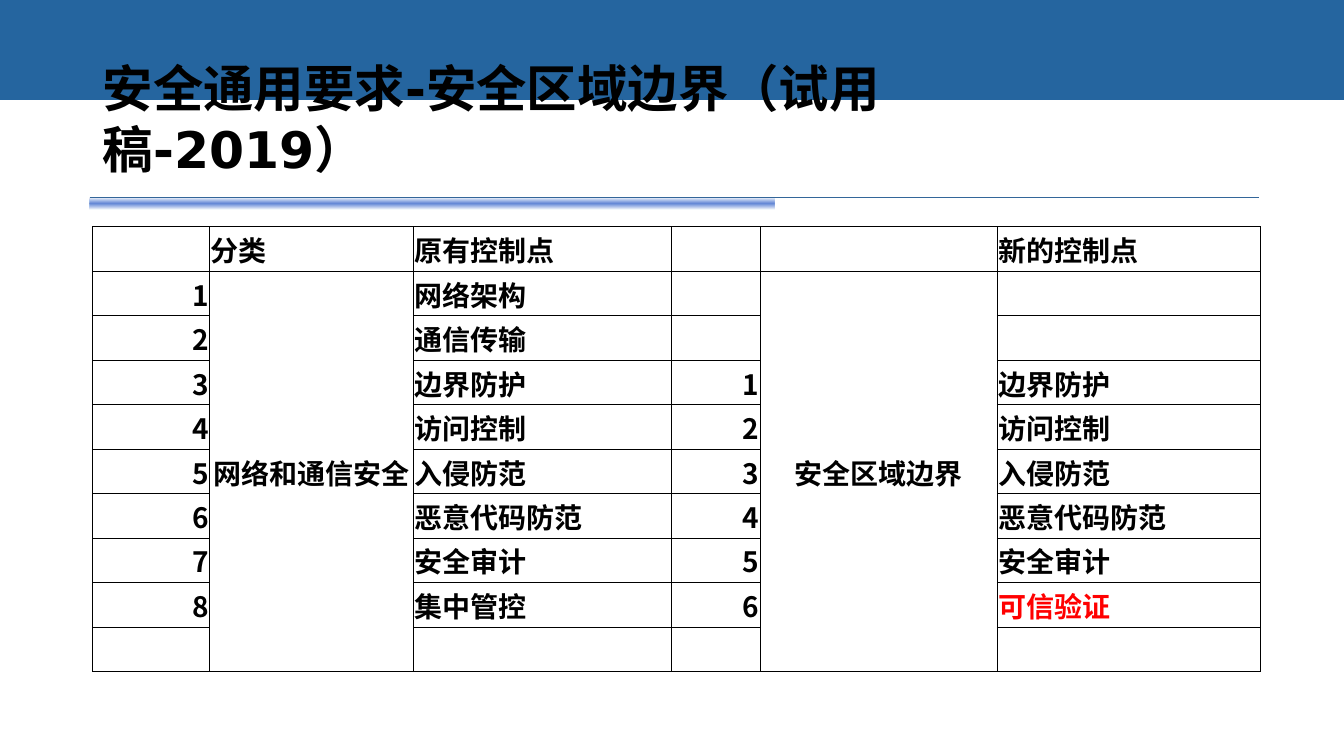
from lxml import etree
from pptx import Presentation
from pptx.dml.color import RGBColor
from pptx.enum.shapes import MSO_CONNECTOR, MSO_SHAPE
from pptx.enum.text import MSO_ANCHOR, PP_ALIGN
from pptx.oxml import parse_xml
from pptx.oxml.ns import nsdecls, qn
from pptx.util import Inches, Pt

LEFT, CENTER, RIGHT = PP_ALIGN.LEFT, PP_ALIGN.CENTER, PP_ALIGN.RIGHT
MIDDLE, BOTTOM = MSO_ANCHOR.MIDDLE, MSO_ANCHOR.BOTTOM
RECTANGLE, STRAIGHT = MSO_SHAPE.RECTANGLE, MSO_CONNECTOR.STRAIGHT

BLACK = RGBColor(0x00, 0x00, 0x00)
RED = RGBColor(0xFF, 0x00, 0x00)
BAND_BLUE = RGBColor(0x25, 0x65, 0x9F)
RULE_BLUE = RGBColor(0x33, 0x66, 0x99)
GLOW_EDGE = RGBColor(0x57, 0x81, 0xD5)
GLOW_CORE = RGBColor(0x63, 0x87, 0xD6)

TITLE_FONT = "DejaVu Sans"
BODY_FONT = "Noto Sans CJK SC"

COLUMN_WIDTHS = [1.16, 2.02, 2.56, 0.88, 2.35, 2.61]
COLUMN_ALIGNS = [RIGHT, CENTER, LEFT, RIGHT, CENTER, LEFT]
HEADER = ["", "分类", "原有控制点", "", "", "新的控制点"]
OLD_POINTS = ["网络架构", "通信传输", "边界防护", "访问控制", "入侵防范",
              "恶意代码防范", "安全审计", "集中管控"]
NEW_POINTS = OLD_POINTS[2:7] + ["可信验证"]
FIRST_NEW_ROW = 3


def write_text(frame, text, size=20, font=BODY_FONT, color=BLACK, bold=True, align=LEFT):
    paragraph = frame.paragraphs[0]
    paragraph.alignment = align
    run = paragraph.add_run()
    run.text = text
    run.font.size = Pt(size)
    run.font.name = font
    run.font.bold = bold
    run.font.color.rgb = color
    east_asian = parse_xml(f'<a:ea {nsdecls("a")} typeface="{BODY_FONT}"/>')
    run.font._element.find(qn("a:latin")).addnext(east_asian)


class SlideBuilder:
    def __init__(self, slide):
        self.shapes = slide.shapes

    def rectangle(self, left, top, width, height, color=None):
        shape = self.shapes.add_shape(
            RECTANGLE, Inches(left), Inches(top), Inches(width), Inches(height))
        shape.shadow.inherit = False
        shape.line.fill.background()
        if color is not None:
            shape.fill.solid()
            shape.fill.fore_color.rgb = color
        return shape

    def glow_bar(self, left, top, width, height):
        bar = self.rectangle(left, top, width, height)
        gradient = parse_xml(
            f'<a:gradFill {nsdecls("a")} rotWithShape="1"><a:gsLst>'
            f'<a:gs pos="0"><a:srgbClr val="{GLOW_EDGE}"><a:alpha val="0"/></a:srgbClr></a:gs>'
            f'<a:gs pos="50000"><a:srgbClr val="{GLOW_CORE}"/></a:gs>'
            f'<a:gs pos="100000"><a:srgbClr val="{GLOW_EDGE}"><a:alpha val="0"/></a:srgbClr></a:gs>'
            '</a:gsLst><a:lin ang="5400000" scaled="0"/></a:gradFill>')
        bar._element.spPr.find(qn("a:prstGeom")).addnext(gradient)

    def rule(self, left, top, width):
        line = self.shapes.add_connector(
            STRAIGHT, Inches(left), Inches(top), Inches(left + width), Inches(top))
        line.line.color.rgb = RULE_BLUE
        line.line.width = Pt(0.75)
        etree.SubElement(line._element.spPr, qn("a:effectLst"))

    def title(self, text, left, top, width, height):
        frame = self.shapes.add_textbox(
            Inches(left), Inches(top), Inches(width), Inches(height)).text_frame
        frame.word_wrap = True
        frame.vertical_anchor = BOTTOM
        frame.margin_left = frame.margin_right = Inches(0.1)
        frame.margin_top = frame.margin_bottom = 0
        write_text(frame, text, size=36, font=TITLE_FONT)

    def table(self, rows, left, top, height):
        table = self.shapes.add_table(
            len(rows), len(COLUMN_WIDTHS), Inches(left), Inches(top),
            Inches(sum(COLUMN_WIDTHS)), Inches(height)).table
        table.first_row = table.horz_banding = False
        for column, width in zip(table.columns, COLUMN_WIDTHS):
            column.width = Inches(width)
        for r, row in enumerate(rows):
            for c, text in enumerate(row):
                self.cell(table.cell(r, c), text,
                          color=RED if text == NEW_POINTS[-1] else BLACK,
                          align=COLUMN_ALIGNS[c] if r else LEFT)
        for c in (1, 4):
            table.cell(1, c).merge(table.cell(len(rows) - 1, c))

    def cell(self, cell, text, **text_format):
        cell.vertical_anchor = MIDDLE
        cell.margin_left = cell.margin_right = cell.margin_top = Inches(0.01)
        cell.margin_bottom = 0
        properties = cell._tc.get_or_add_tcPr()
        for side in ("lnL", "lnR", "lnT", "lnB"):
            properties.append(parse_xml(
                f'<a:{side} {nsdecls("a")} w="{Pt(0.5)}"><a:solidFill>'
                f'<a:srgbClr val="{BLACK}"/></a:solidFill></a:{side}>'))
        cell.fill.background()
        if text:
            write_text(cell.text_frame, text, **text_format)


def control_rows():
    rows = [HEADER]
    for number, old_point in enumerate(OLD_POINTS, 1):
        new_number = number - FIRST_NEW_ROW + 1
        is_new = new_number > 0
        rows.append([
            str(number),
            "网络和通信安全" if number == 1 else "",
            old_point,
            str(new_number) if is_new else "",
            "安全区域边界" if number == 1 else "",
            NEW_POINTS[new_number - 1] if is_new else "",
        ])
    return rows + [[""] * len(HEADER)]


def main():
    deck = Presentation()
    deck.slide_width, deck.slide_height = Inches(13.33), Inches(7.5)
    builder = SlideBuilder(deck.slides.add_slide(deck.slide_layouts[6]))
    builder.glow_bar(0.89, 1.96, 6.79, 0.12)
    builder.rule(0.89, 1.96, 11.6)
    builder.rectangle(0, 0, 13.33, 0.99, BAND_BLUE)
    builder.title("安全通用要求-安全区域边界（试用稿-2019）", 0.92, 0.44, 10.25, 1.33)
    builder.table(control_rows(), 0.92, 2.25, 4.41)
    deck.save("out.pptx")


if __name__ == "__main__":
    main()
